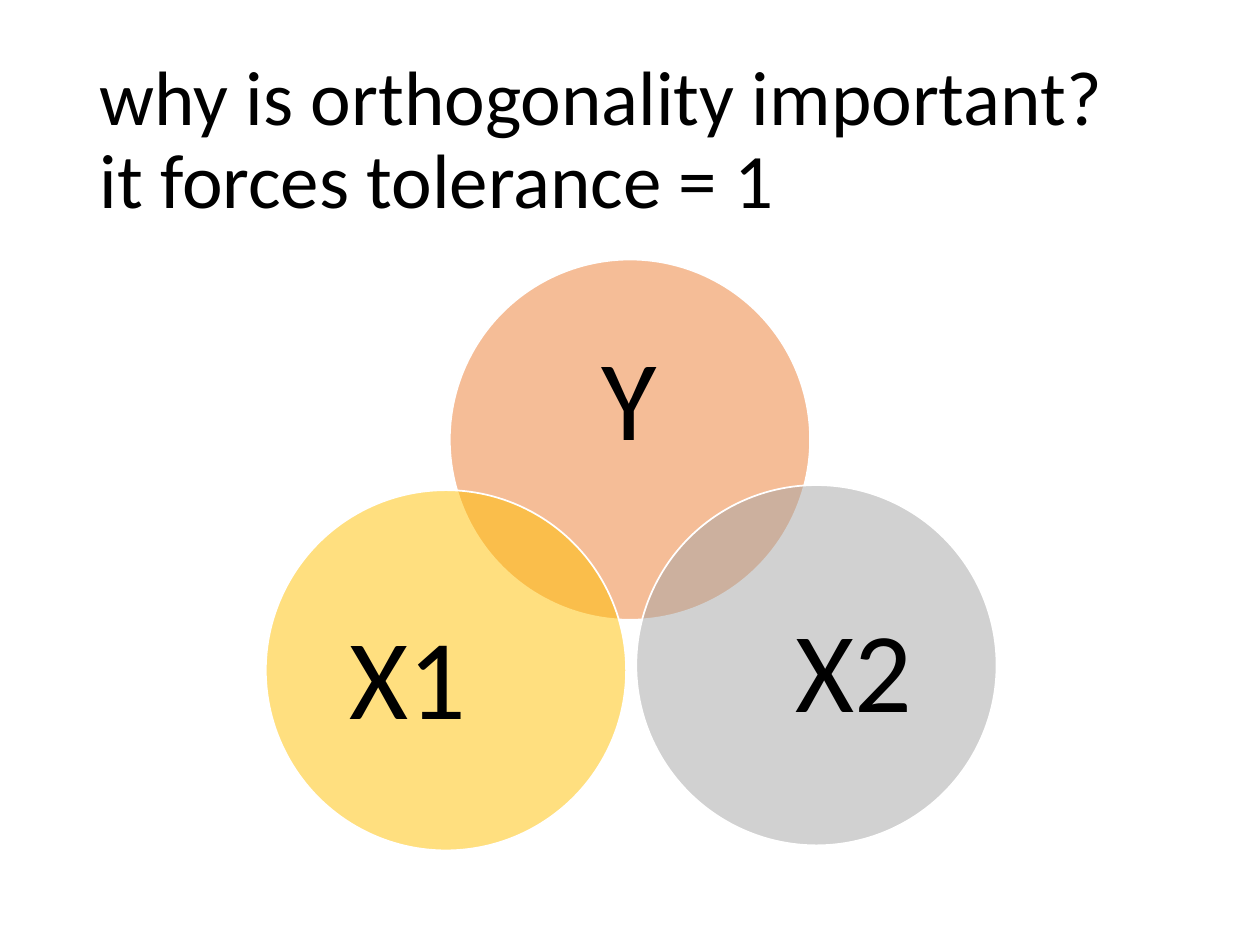
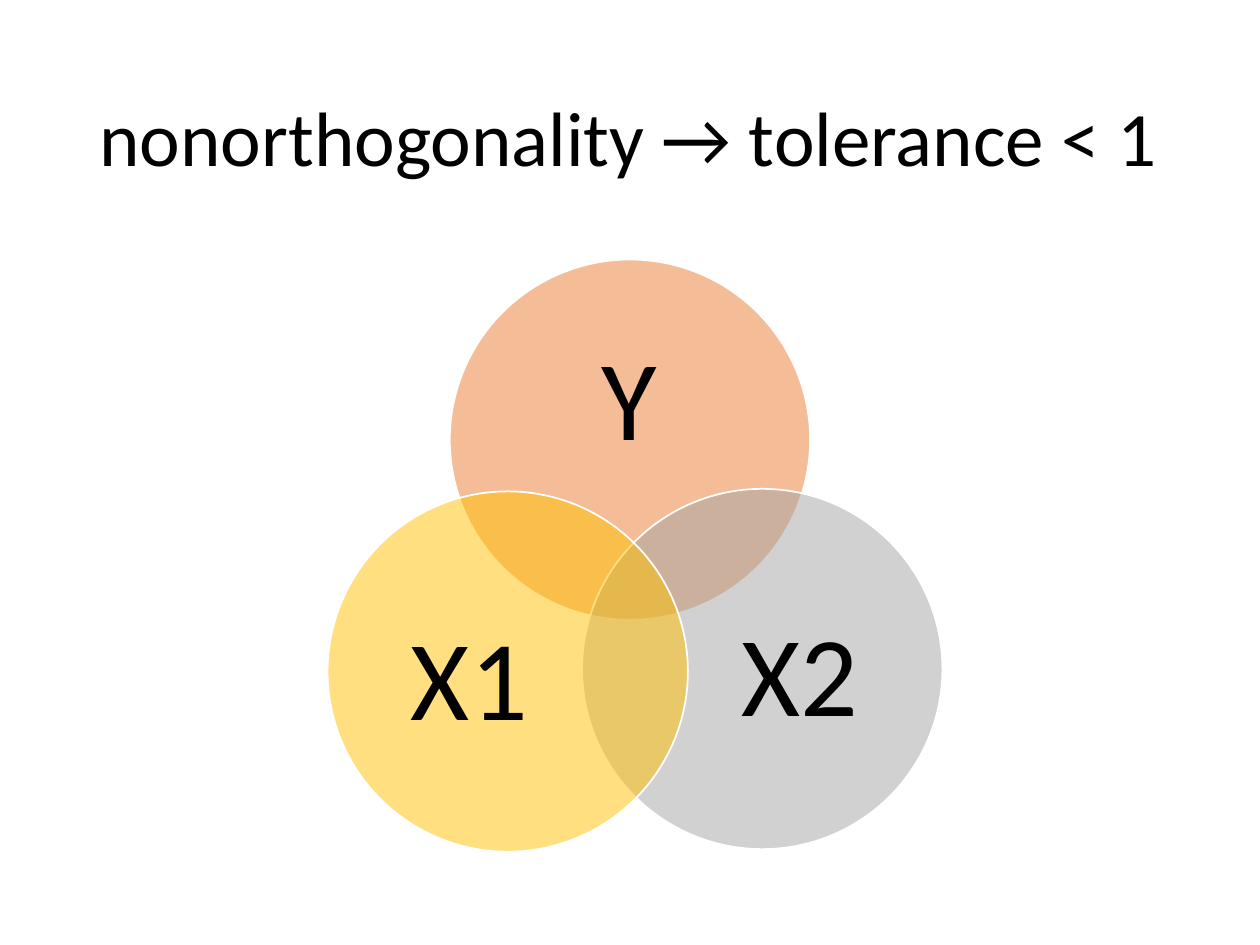
"""Build two Venn-diagram slides on orthogonality and tolerance."""
from lxml import etree
from pptx import Presentation
from pptx.dml.color import RGBColor
from pptx.enum.shapes import MSO_SHAPE
from pptx.enum.text import MSO_ANCHOR, MSO_AUTO_SIZE, PP_ALIGN
from pptx.oxml.ns import qn
from pptx.util import Inches, Pt

OVAL = MSO_SHAPE.OVAL
MIDDLE = MSO_ANCHOR.MIDDLE
LEFT, CENTER = PP_ALIGN.LEFT, PP_ALIGN.CENTER
NO_FIT = MSO_AUTO_SIZE.NONE

FONT = "Calibri"
COLORS = {"Y": "ED7D31", "X2": "A5A5A5", "X1": "FFC000",
          "text": "000000", "outline": "FFFFFF", "background": "FFFFFF"}
TITLE_BOX = (0.69, 0.4, 8.62, 1.45)
TITLE_SIZE, LABEL_SIZE = 44, 65
DIAMETER = 2.86
OPACITY = 50

LABEL_BOXES = {
    "Y": (0.38, 0.5, 2.09, 1.28),
    "X2": (0.87, 0.73, 1.71, 1.57),
    "X1": (0.27, 0.74, 1.71, 1.57),
}
SLIDES = [
    {"title": "why is orthogonality important?\vit forces tolerance = 1",
     "circles": {"Y": (3.57, 2.06), "X2": (5.05, 3.85), "X1": (2.11, 3.89)}},
    {"title": "nonorthogonality → tolerance < 1",
     "circles": {"Y": (3.57, 2.06), "X2": (4.62, 3.88), "X1": (2.6, 3.9)}},
]


def rgb(name):
    return RGBColor.from_string(COLORS[name])


def inches(values):
    return [Inches(v) for v in values]


def write(tf, text, size, align):
    tf.word_wrap = True
    tf.auto_size = NO_FIT
    tf.vertical_anchor = MIDDLE
    p = tf.paragraphs[0]
    p.text = text
    p.alignment = align
    p.line_spacing = 0.9
    for r in p.runs:
        r.font.name = FONT
        r.font.size = Pt(size)
        r.font.color.rgb = rgb("text")


def add_title(slide, text):
    sp = slide.shapes.title
    sp.left, sp.top, sp.width, sp.height = inches(TITLE_BOX)
    write(sp.text_frame, text, TITLE_SIZE, LEFT)


def add_circle(slide, name, left, top):
    sp = slide.shapes.add_shape(OVAL, *inches((left, top, DIAMETER, DIAMETER)))
    sp.shadow.inherit = False
    sp.fill.solid()
    sp.fill.fore_color.rgb = rgb(name)
    color = sp.fill._xPr.find(qn("a:solidFill"))[0]
    etree.SubElement(color, qn("a:alpha")).set("val", str(OPACITY * 1000))
    sp.line.color.rgb = rgb("outline")
    sp.line.width = Pt(1)


def add_label(slide, name, left, top):
    dx, dy, width, height = LABEL_BOXES[name]
    box = slide.shapes.add_textbox(*inches((left + dx, top + dy, width, height)))
    tf = box.text_frame
    tf.margin_left = tf.margin_right = tf.margin_top = tf.margin_bottom = 0
    write(tf, name, LABEL_SIZE, CENTER)


def main():
    prs = Presentation()
    prs.slide_width, prs.slide_height = Inches(10), Inches(7.5)
    for content in SLIDES:
        slide = prs.slides.add_slide(prs.slide_layouts.get_by_name("Title Only"))
        slide.background.fill.solid()
        slide.background.fill.fore_color.rgb = rgb("background")
        add_title(slide, content["title"])
        for name, (left, top) in content["circles"].items():
            add_circle(slide, name, left, top)
            add_label(slide, name, left, top)
    prs.save("out.pptx")


if __name__ == "__main__":
    main()
